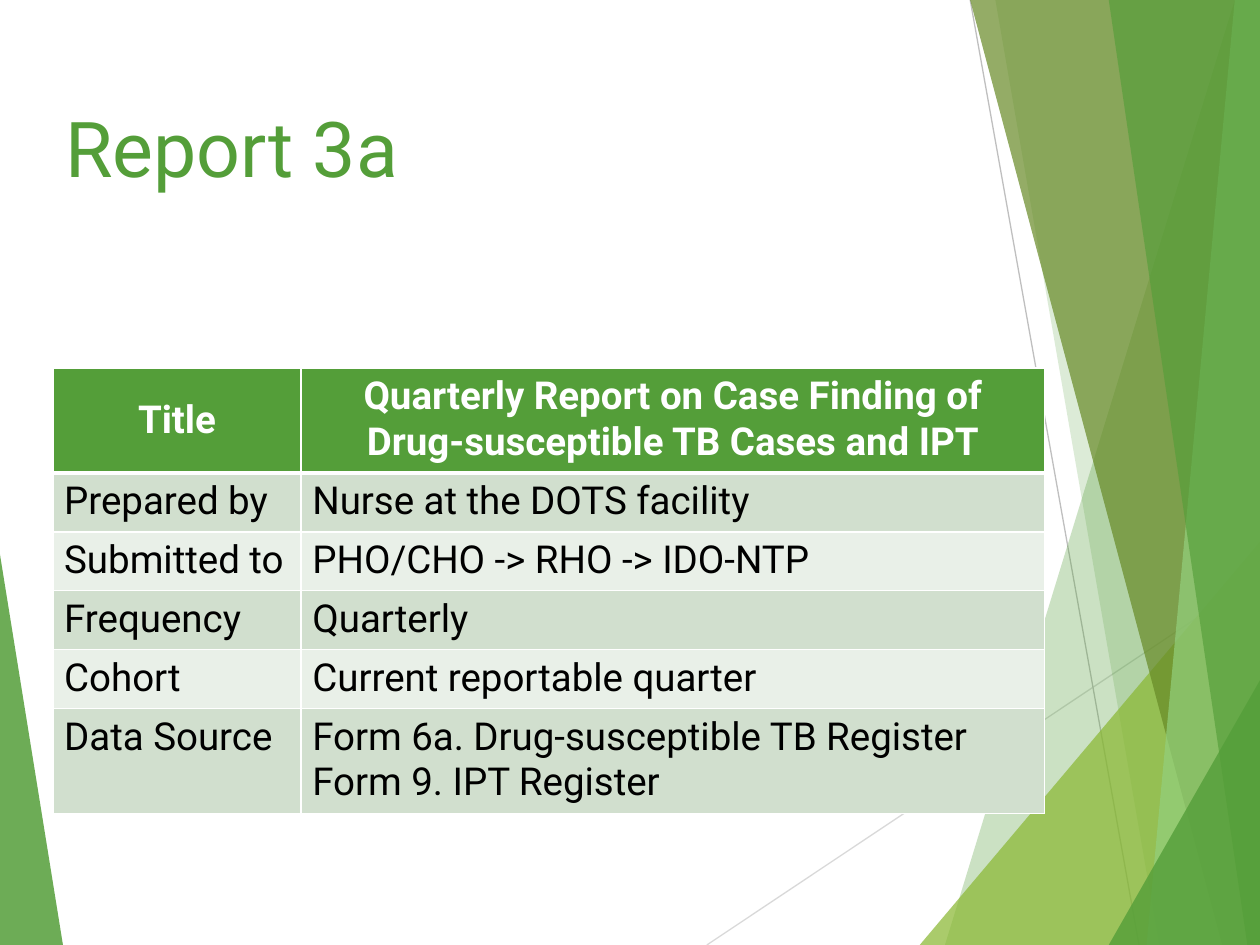
from dataclasses import dataclass

from lxml import etree
from pptx import Presentation
from pptx.dml.color import RGBColor
from pptx.enum.shapes import MSO_CONNECTOR
from pptx.enum.text import MSO_ANCHOR, PP_ALIGN
from pptx.oxml.ns import qn
from pptx.util import Inches, Pt

STRAIGHT = MSO_CONNECTOR.STRAIGHT
TOP, MIDDLE = MSO_ANCHOR.TOP, MSO_ANCHOR.MIDDLE
LEFT, CENTER = PP_ALIGN.LEFT, PP_ALIGN.CENTER

COLUMNS, ROWS = 100, 75
UNIT = Inches(0.1)


@dataclass(frozen=True)
class Theme:
    font: str = "Roboto"
    title_size: int = 44
    table_size: int = 22
    green: str = "549E39"
    lime: str = "8AB833"
    olive: str = "678A26"
    mint: str = "93D07D"
    light_gray: str = "D9D9D9"
    gray: str = "BFBFBF"
    white: str = "FFFFFF"
    black: str = "000000"
    bands: tuple = ("D1DFCE", "E9F0E8")


THEME = Theme()

FACETS = [
    ([(0, 43.9), (4.9, ROWS), (0, ROWS)], THEME.green, 85),
    ([(97.5, 0), (75.4, ROWS), (COLUMNS, ROWS), (COLUMNS, 0)], THEME.green, 30),
    ([(78.8, 0), (91.9, ROWS), (COLUMNS, ROWS), (COLUMNS, 0)], THEME.green, 20),
    ([(72.6, ROWS), (COLUMNS, 42.9), (COLUMNS, ROWS)], THEME.lime, 72),
    ([(76.7, 0), (97, ROWS), (COLUMNS, ROWS), (COLUMNS, 0)], THEME.olive, 70),
    ([(98.1, 0), (90.7, ROWS), (COLUMNS, ROWS), (COLUMNS, 0)], THEME.mint, 70),
    ([(88.3, 0), (98.6, ROWS), (COLUMNS, ROWS), (99.8, 0)], THEME.green, 65),
    ([(88.1, ROWS), (COLUMNS, 53.5), (COLUMNS, ROWS)], THEME.green, 80),
]

LINES = [
    ((56.1, ROWS), (COLUMNS, 45.7), THEME.light_gray),
    ((77, 0), (90.4, ROWS), THEME.gray),
]

REPORT = [
    ("Title", "Quarterly Report on Case Finding of Drug-susceptible TB Cases and IPT"),
    ("Prepared by", "Nurse at the DOTS facility"),
    ("Submitted to", "PHO/CHO -> RHO -> IDO-NTP"),
    ("Frequency", "Quarterly"),
    ("Cohort", "Current reportable quarter"),
    ("Data Source", "Form 6a. Drug-susceptible TB Register\nForm 9. IPT Register"),
]


def grid(value):
    return round(value * UNIT)


def write(frame, text, size, color, bold=False, align=LEFT):
    frame.word_wrap = True
    for index, line in enumerate(text.split("\n")):
        para = frame.add_paragraph() if index else frame.paragraphs[0]
        para.alignment = align
        span = para.add_run()
        span.text = line
        span.font.name = THEME.font
        span.font.size = Pt(size)
        span.font.bold = bold
        span.font.color.rgb = RGBColor.from_string(color)


class SlideBuilder:
    def __init__(self, page, theme):
        self.shapes = page.shapes
        self.theme = theme

    def facet(self, points, color, opacity):
        builder = self.shapes.build_freeform(*points[0], scale=UNIT)
        builder.add_line_segments(points[1:], close=True)
        shape = builder.convert_to_shape()
        shape.shadow.inherit = False
        shape.line.fill.background()
        shape.fill.solid()
        shape.fill.fore_color.rgb = RGBColor.from_string(color)
        tint = shape.fill._xPr.find(".//" + qn("a:srgbClr"))
        etree.SubElement(tint, qn("a:alpha"), val=str(opacity * 1000))

    def line(self, start, end, color):
        connector = self.shapes.add_connector(STRAIGHT, *map(grid, start + end))
        connector.line.width = Pt(0.75)
        connector.line.color.rgb = RGBColor.from_string(color)
        etree.SubElement(connector._element.spPr, qn("a:effectLst"))

    def title(self, text, place):
        box = self.shapes.add_textbox(*map(grid, place))
        write(box.text_frame, text, self.theme.title_size, self.theme.green)

    def borders(self, cell, widths):
        properties = cell._tc.get_or_add_tcPr()
        for index, (side, width) in enumerate(widths.items()):
            edge = etree.Element(qn("a:ln" + side), w=str(Pt(width)))
            fill = etree.SubElement(edge, qn("a:solidFill"))
            etree.SubElement(fill, qn("a:srgbClr"), val=self.theme.white)
            properties.insert(index, edge)

    def table(self, content, left, top, widths, heights):
        place = map(grid, (left, top, sum(widths), sum(heights)))
        table = self.shapes.add_table(len(heights), len(widths), *place).table
        for column, width in zip(table.columns, widths):
            column.width = grid(width)
        for row_index, (row, height) in enumerate(zip(table.rows, heights)):
            row.height = grid(height)
            header = row_index == 0
            fill = self.theme.green if header else self.theme.bands[(row_index - 1) % 2]
            for column_index, (cell, text) in enumerate(zip(row.cells, content[row_index])):
                cell.fill.solid()
                cell.fill.fore_color.rgb = RGBColor.from_string(fill)
                cell.margin_left = cell.margin_right = Inches(0.09)
                cell.margin_top = cell.margin_bottom = Inches(0.05)
                cell.vertical_anchor = MIDDLE if header and column_index == 0 else TOP
                write(cell.text_frame, text, self.theme.table_size,
                      self.theme.white if header else self.theme.black,
                      bold=header, align=CENTER if header else LEFT)
                self.borders(cell, {"L": 1, "R": 1,
                                    "T": 3 if row_index == 1 else 1,
                                    "B": 3 if header else 1})


def main():
    deck = Presentation()
    deck.slide_width, deck.slide_height = grid(COLUMNS), grid(ROWS)
    page = deck.slides.add_slide(deck.slide_layouts[6])
    builder = SlideBuilder(page, THEME)
    builder.facet(*FACETS[0])
    for line in LINES:
        builder.line(*line)
    for facet in FACETS[1:]:
        builder.facet(*facet)
    builder.title("Report 3a", (4.2, 7.5, 78.7, 8.2))
    builder.table(REPORT, 4.2, 29.2, (19.7, 59), (8.1, 4.6, 4.6, 4.6, 4.6, 8.1))
    deck.save("out.pptx")


if __name__ == "__main__":
    main()
